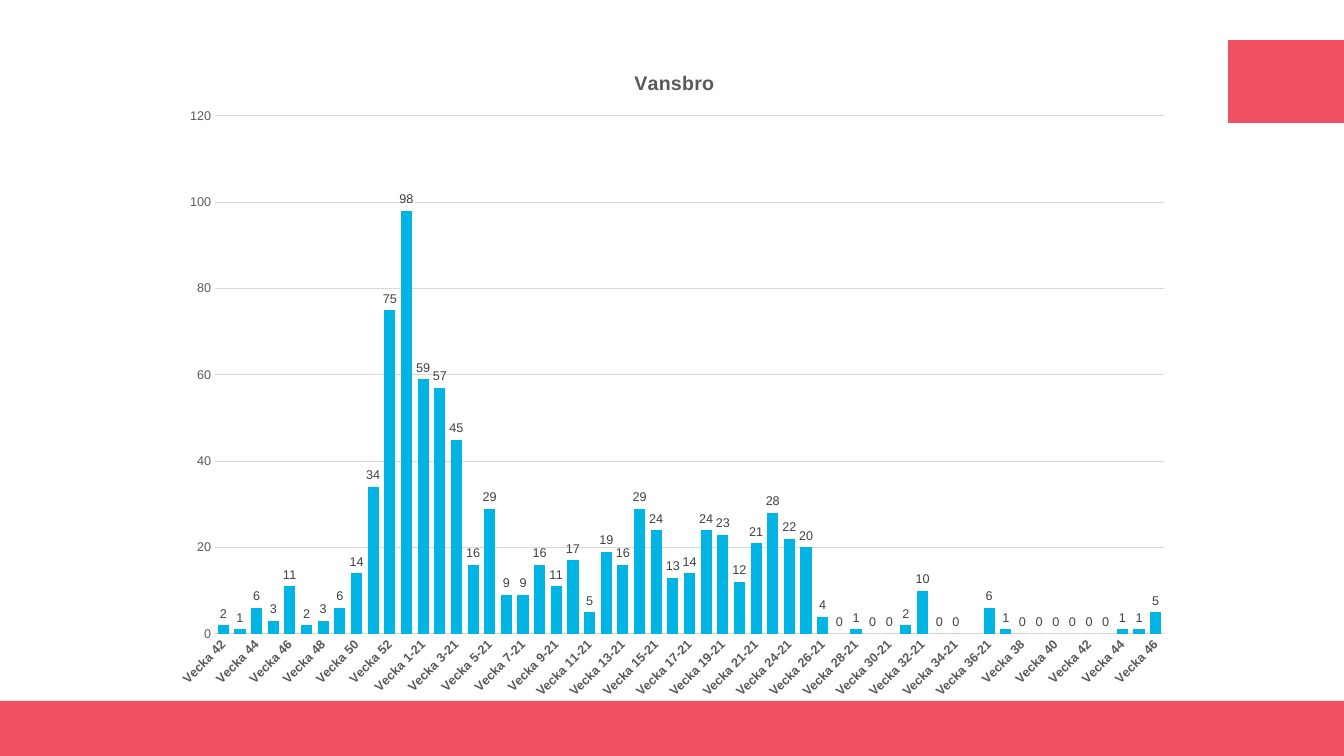
from dataclasses import dataclass

from pptx import Presentation
from pptx.chart.data import CategoryChartData
from pptx.dml.color import RGBColor
from pptx.enum.chart import XL_CHART_TYPE, XL_LABEL_POSITION, XL_TICK_MARK
from pptx.enum.shapes import MSO_SHAPE
from pptx.oxml import parse_xml
from pptx.oxml.ns import nsdecls, qn
from pptx.util import Emu, Pt


@dataclass(frozen=True)
class Theme:
    font: str = "Arial"
    band: RGBColor = RGBColor(0xF1, 0x50, 0x60)
    column: RGBColor = RGBColor(0x00, 0xB4, 0xE4)
    grid: RGBColor = RGBColor(0xD9, 0xD9, 0xD9)
    muted: RGBColor = RGBColor(0x59, 0x59, 0x59)
    label: RGBColor = RGBColor(0x40, 0x40, 0x40)
    black: RGBColor = RGBColor(0, 0, 0)
    title_size: int = 14
    base_size: int = 10
    small_size: int = 9


theme = Theme()
PX = 914400 / 100.8


def set_text(target, text=None, size=theme.small_size, color=theme.muted, bold=False):
    if text is not None:
        target.text = text
        target = target.paragraphs[0].runs[0]
    font = target.font
    font.name = theme.font
    font.size = Pt(size)
    font.bold = bold
    font.color.rgb = color


def set_layout(parent, index, extra="", **fractions):
    for layout in parent.findall(qn("c:layout")):
        parent.remove(layout)
    modes = "".join(f'<c:{axis}Mode val="edge"/>' for axis in "xy")
    values = "".join(f'<c:{name} val="{value:.4f}"/>' for name, value in fractions.items())
    parent.insert(index, parse_xml(
        f'<c:layout {nsdecls("c")}><c:manualLayout>{extra}{modes}{values}'
        "</c:manualLayout></c:layout>"))


presentation = Presentation()
presentation.slide_width = Emu(round(1344 * PX))
presentation.slide_height = Emu(round(756 * PX))
slide = presentation.slides.add_slide(presentation.slide_layouts[6])

for box in [(0, 701, 1344, 55), (1228, 40, 116, 83)]:
    shape = slide.shapes.add_shape(MSO_SHAPE.RECTANGLE, *(round(length * PX) for length in box))
    shape.shadow.inherit = False
    shape.fill.solid()
    shape.fill.fore_color.rgb = theme.band
    shape.line.fill.background()

weeks = [f"Vecka {week}" for week in range(42, 54)]
weeks += [f"Vecka {week}-21" for week in range(1, 37) if week != 23]
weeks += [f"Vecka {week}" for week in range(37, 47)]
cases = [
    2, 1, 6, 3, 11, 2, 3, 6, 14, 34, 75, 98,
    59, 57, 45, 16, 29, 9, 9, 16, 11, 17, 5, 19, 16, 29, 24, 13, 14, 24, 23, 12, 21, 28,
    22, 20, 4, 0, 1, 0, 0, 2, 10, 0, 0, None, 6,
    1, 0, 0, 0, 0, 0, 0, 1, 1, 5,
]
chart_data = CategoryChartData()
chart_data.categories = weeks
chart_data.add_series("Series 1", cases)

left, top, width, height = 159, 42, 1026, 670
chart = slide.shapes.add_chart(
    XL_CHART_TYPE.COLUMN_CLUSTERED,
    *(round(length * PX) for length in (left, top, width, height)), chart_data).chart
chart.has_legend = False
set_text(chart, size=theme.base_size, color=theme.black)
chart.has_title = True
title = chart.chart_title
set_text(title.text_frame, "Vansbro", size=theme.title_size, bold=True)
title.include_in_layout = False
set_layout(title._element, 1, x=(631 - left) / width, y=(67 - top) / height)
set_layout(
    chart._chartSpace.chart.plotArea, 0, '<c:layoutTarget val="inner"/>',
    x=(215 - left) / width, y=(116 - top) / height, w=949 / width, h=518 / height)

plot = chart.plots[0]
plot.gap_width = 50
plot.overlap = -27
plot.vary_by_categories = False
series = plot.series[0]
series.invert_if_negative = False
series.format.fill.solid()
series.format.fill.fore_color.rgb = theme.column
plot.has_data_labels = True
labels = plot.data_labels
labels.show_value = True
labels.position = XL_LABEL_POSITION.OUTSIDE_END
set_text(labels, color=theme.label)

category_axis, value_axis = chart.category_axis, chart.value_axis
for axis in (category_axis, value_axis):
    axis.major_tick_mark = XL_TICK_MARK.NONE
    axis.minor_tick_mark = XL_TICK_MARK.NONE
    set_text(axis.tick_labels, bold=axis is category_axis)
category_axis._element.txPr.find(qn("a:bodyPr")).set("rot", "-2700000")
value_axis.minimum_scale = 0
value_axis.maximum_scale = 120
value_axis.major_unit = 20
value_axis.has_major_gridlines = True
value_axis.format.line.fill.background()
for line in (category_axis.format.line, value_axis.major_gridlines.format.line):
    line.color.rgb = theme.grid
    line.width = Pt(0.75)

presentation.save("out.pptx")
